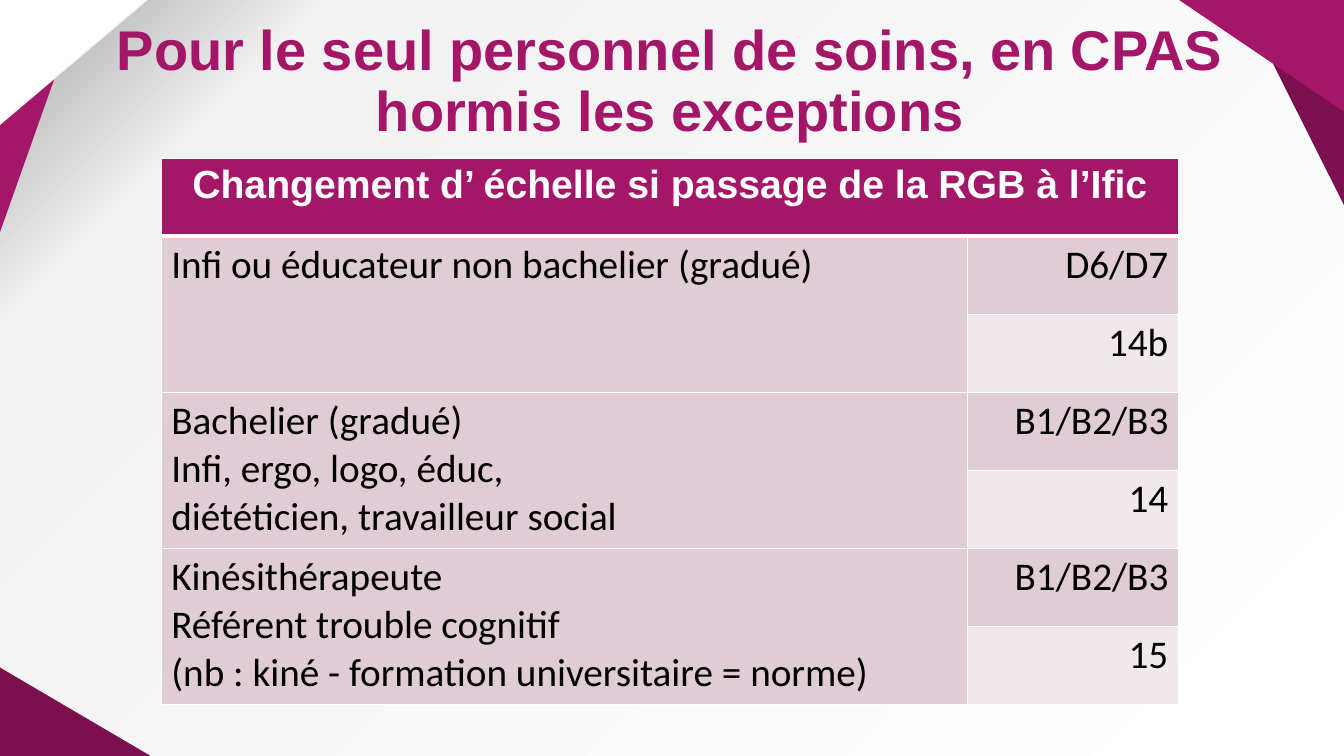
from copy import deepcopy
from dataclasses import dataclass

from pptx import Presentation
from pptx.dml.color import RGBColor
from pptx.enum.shapes import MSO_SHAPE
from pptx.enum.text import MSO_ANCHOR, MSO_AUTO_SIZE, PP_ALIGN
from pptx.oxml import parse_xml
from pptx.oxml.ns import nsdecls
from pptx.util import Pt


@dataclass(frozen=True)
class Theme:
    magenta: str = "A31668"
    plum: str = "7A114E"
    white: str = "FFFFFF"
    pale: str = "F2F2F2"
    grey: str = "A6A6A6"
    black: str = "000000"
    rose: str = "E0CCD4"
    light_rose: str = "F0E8EB"
    heading_font: str = "Arial"
    body_font: str = "Calibri"
    title_size: int = 40
    table_size: int = 28


THEME = Theme()
WIDTH, HEIGHT = 960, 540
HEADING = "Changement d’ échelle si passage de la RGB à l’Ific"
SCALE_CHANGES = [
    ("Infi ou éducateur non bachelier (gradué)", "D6/D7", "14b"),
    ("Bachelier (gradué)\nInfi, ergo, logo, éduc,\ndiététicien, travailleur social",
     "B1/B2/B3", "14"),
    ("Kinésithérapeute\nRéférent trouble cognitif\n"
     "(nb : kiné - formation universitaire = norme)", "B1/B2/B3", "15"),
]


def write(frame, text, *, size, font=THEME.body_font, color=THEME.black,
          bold=False, align=PP_ALIGN.LEFT, spacing=None):
    frame.text = text
    for paragraph in frame.paragraphs:
        paragraph.alignment = align
        if spacing:
            paragraph.line_spacing = spacing
        for run in paragraph.runs:
            run.font.name = font
            run.font.size = Pt(size)
            run.font.bold = bold
            run.font.color.rgb = RGBColor.from_string(color)


def paint_background(slide):
    fill = slide.background.fill
    fill.gradient()
    fill.gradient_angle = 315
    first_stop = slide.element.xpath(".//a:gsLst/a:gs")[0]
    first_stop.addnext(deepcopy(first_stop))
    shades = [(0, THEME.grey), (0.16, THEME.pale), (1, THEME.white)]
    for stop, (position, color) in zip(fill.gradient_stops, shades):
        stop.position = position
        stop.color.rgb = RGBColor.from_string(color)


def add_corner(slide, box, color, *, line=None, rotation=0, flip=False):
    corner = slide.shapes.add_shape(MSO_SHAPE.RIGHT_TRIANGLE, *map(Pt, box))
    corner.shadow.inherit = False
    corner.rotation = rotation
    if flip:
        corner.element.spPr.get_or_add_xfrm().set("flipV", "1")
    corner.fill.solid()
    corner.fill.fore_color.rgb = RGBColor.from_string(color)
    corner.line.color.rgb = RGBColor.from_string(line or color)
    corner.line.width = Pt(1)


def add_corners(slide, box):
    left, top, width, height = box
    right, bottom = left + width, top + height
    add_corner(slide, (left - 0.7, top, 59, 166.3), THEME.magenta, flip=True)
    add_corner(slide, (left, bottom - 62.6, 106.6, 62.6), THEME.plum)
    add_corner(slide, (left + 7.2, top - 9.4, 90.7, 107.3), THEME.white,
               line=THEME.pale, rotation=90)
    add_corner(slide, (right - 73, top, 73.4, 146.2), THEME.plum, rotation=180)
    add_corner(slide, (right - 116.9, top, 116.9, 79.2), THEME.magenta, rotation=180)


def place_title(slide, box, text):
    title = slide.shapes.title
    title.left, title.top, title.width, title.height = map(Pt, box)
    frame = title.text_frame
    frame.word_wrap = True
    frame.auto_size = MSO_AUTO_SIZE.NONE
    frame.vertical_anchor = MSO_ANCHOR.MIDDLE
    write(frame, text, size=THEME.title_size, font=THEME.heading_font,
          color=THEME.magenta, bold=True, align=PP_ALIGN.CENTER, spacing=0.9)
    slide.shapes.element.append(title.element)


def style_cell(cell, color, *, top=1, bottom=1):
    cell.fill.solid()
    cell.fill.fore_color.rgb = RGBColor.from_string(color)
    properties = cell._tc.get_or_add_tcPr()
    borders = {"lnL": 1, "lnR": 1, "lnT": top, "lnB": bottom}
    for index, (edge, width) in enumerate(borders.items()):
        properties.insert(index, parse_xml(
            f'<a:{edge} {nsdecls("a")} w="{Pt(width)}"><a:solidFill>'
            f'<a:srgbClr val="{THEME.white}"/></a:solidFill></a:{edge}>'))


def add_scale_table(slide, box, heading, changes):
    left, top, width, height = box
    row_count = 1 + 2 * len(changes)
    table = slide.shapes.add_table(row_count, 2, *map(Pt, box)).table
    scale_width = 150.5
    table.columns[0].width = Pt(width - scale_width)
    table.columns[1].width = Pt(scale_width)
    for row in table.rows:
        row.height = Pt(height / row_count)

    for column in range(2):
        style_cell(table.cell(0, column), THEME.magenta, bottom=3)
    table.cell(0, 0).merge(table.cell(0, 1))
    write(table.cell(0, 0).text_frame, heading, size=THEME.table_size,
          font=THEME.heading_font, color=THEME.white, bold=True,
          align=PP_ALIGN.CENTER)

    for index, (job, *scales) in enumerate(changes):
        first = 1 + 2 * index
        for row, scale in enumerate(scales, first):
            edge = 3 if row == 1 else 1
            style_cell(table.cell(row, 0), THEME.rose, top=edge)
            shade = THEME.rose if row == first else THEME.light_rose
            style_cell(table.cell(row, 1), shade, top=edge)
            write(table.cell(row, 1).text_frame, scale, size=THEME.table_size,
                  align=PP_ALIGN.RIGHT)
        table.cell(first, 0).merge(table.cell(first + 1, 0))
        write(table.cell(first, 0).text_frame, job, size=THEME.table_size)


def main():
    deck = Presentation()
    deck.slide_width, deck.slide_height = Pt(WIDTH), Pt(HEIGHT)
    slide = deck.slides.add_slide(deck.slide_layouts[5])
    paint_background(slide)
    add_corners(slide, (0, 0, WIDTH, HEIGHT))
    place_title(slide, (72.7, 7, 811.4, 104.4),
                "Pour le seul personnel de soins, en CPAS hormis les exceptions")
    add_scale_table(slide, (115.2, 113, 726.5, 390.2), HEADING, SCALE_CHANGES)
    deck.save("out.pptx")


if __name__ == "__main__":
    main()
